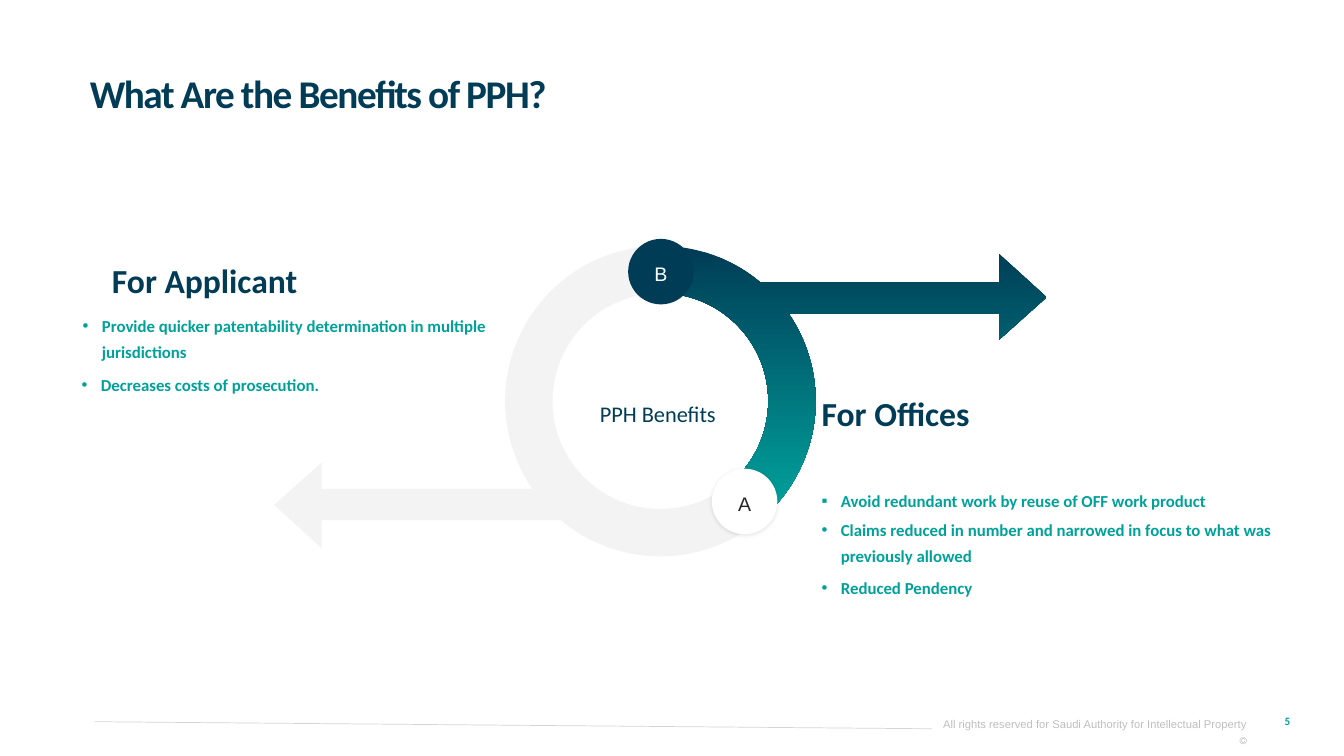
from dataclasses import dataclass
from math import asin, ceil, cos, degrees, floor, radians, sin, tan

from lxml import etree
from pptx import Presentation
from pptx.dml.color import RGBColor
from pptx.enum.shapes import MSO_CONNECTOR, MSO_SHAPE
from pptx.enum.text import MSO_ANCHOR, MSO_AUTO_SIZE, PP_ALIGN
from pptx.oxml.ns import qn
from pptx.util import Inches, Pt

LEFT, CENTER, RIGHT = PP_ALIGN.LEFT, PP_ALIGN.CENTER, PP_ALIGN.RIGHT
TOP, MIDDLE = MSO_ANCHOR.TOP, MSO_ANCHOR.MIDDLE
FIT_SHAPE, NO_FIT = MSO_AUTO_SIZE.SHAPE_TO_FIT_TEXT, MSO_AUTO_SIZE.NONE
OVAL, STRAIGHT = MSO_SHAPE.OVAL, MSO_CONNECTOR.STRAIGHT


@dataclass(frozen=True)
class Theme:
    navy: str = "003C56"
    teal: str = "00A19B"
    pale: str = "F3F3F3"
    white: str = "FFFFFF"
    dark: str = "262626"
    rule: str = "A6A6A6"
    muted: str = "BFBFBF"
    heading_font: str = "Calibri"
    plain_font: str = "Arial"
    title: int = 28
    heading: int = 24
    center: int = 16
    badge: int = 14
    body: int = 12
    small: int = 8
    tiny: int = 7


THEME = Theme()
RING_CENTER = (6.55, 3.98)
OUTER_RADIUS, INNER_RADIUS = 1.54, 1.07
SHAFT_TOP, SHAFT_BOTTOM = -1.18, -0.87
# Arrowhead corners relative to the ring centre
ARROW = [(3.36, SHAFT_TOP), (3.36, -1.46), (3.83, -1.03),
         (3.36, -0.61), (3.36, SHAFT_BOTTOM)]
BADGE_SIZE = 0.65
BULLET_INDENT = 0.19
BULLETS = [
    (0.82, 3.02, 4.18, 0.6, "•",
     "Provide quicker patentability determination in multiple jurisdictions"),
    (0.81, 3.61, 4.18, 0.33, "•", "Decreases costs of prosecution."),
    (8.15, 4.76, 4.97, 0.33, "▪",
     "Avoid redundant work by reuse of OFF work product"),
    (8.15, 5.05, 4.97, 0.6, "•",
     "Claims reduced in number and narrowed in focus to what was previously allowed"),
    (8.15, 5.62, 4.97, 0.33, "•", "Reduced Pendency"),
]


def rgb(color):
    return RGBColor.from_string(color)


def add_run(paragraph, text, size, color, font=THEME.heading_font, bold=False):
    run = paragraph.add_run()
    run.text = text
    run.font.name = font
    run.font.size = Pt(size)
    run.font.bold = bold
    run.font.color.rgb = rgb(color)
    return run


def write_text(shape, text, *, size, color, font=THEME.heading_font, bold=False,
               align=LEFT, anchor=TOP, margins=(0, 0.05, 0, 0.05), spacing=1.3,
               wrap=True, fit=FIT_SHAPE, bullet=None):
    """Format the shape's text and return its paragraph and run."""
    frame = shape.text_frame
    frame.word_wrap = wrap
    frame.auto_size = fit
    frame.vertical_anchor = anchor
    (frame.margin_left, frame.margin_top,
     frame.margin_right, frame.margin_bottom) = map(Inches, margins)
    paragraph = frame.paragraphs[0]
    paragraph.alignment = align
    paragraph.line_spacing = spacing
    if bullet:
        properties = paragraph._p.get_or_add_pPr()
        properties.set("marL", str(Inches(BULLET_INDENT)))
        properties.set("indent", str(-Inches(BULLET_INDENT)))
        bullet_font = etree.SubElement(properties, qn("a:buFont"))
        bullet_font.set("typeface", THEME.plain_font)
        etree.SubElement(properties, qn("a:buChar")).set("char", bullet)
    return paragraph, add_run(paragraph, text, size, color, font, bold)


def add_text(slide, left, top, width, height, text, **text_format):
    box = slide.shapes.add_textbox(*map(Inches, (left, top, width, height)))
    return write_text(box, text, **text_format)


def arc_curves(radius, start, end):
    """Return Bezier triples along an arc, split where it crosses an axis."""
    low, high = sorted((start, end))
    crossings = [90 * turn for turn in range(ceil(low / 90), floor(high / 90) + 1)]
    angles = [radians(angle) for angle in sorted({low, high, *crossings})]
    if start > end:
        angles.reverse()
    curves = []
    for first, last in zip(angles, angles[1:]):
        pull = 4 / 3 * tan((last - first) / 4)
        curves.append([
            (radius * (cos(first) - pull * sin(first)), radius * (sin(first) + pull * cos(first))),
            (radius * (cos(last) + pull * sin(last)), radius * (sin(last) - pull * cos(last))),
            (radius * cos(last), radius * sin(last))])
    return curves


def add_ring_arrow(slide, direction, outer_start, outer_end, inner_start, inner_end):
    """Draw a ring segment with an arrow; direction -1 turns it half round."""
    def polar(radius, angle):
        return radius * cos(radians(angle)), radius * sin(radians(angle))

    def place(point):
        return tuple(Inches(center + direction * offset)
                     for center, offset in zip(RING_CENTER, point))

    leave = degrees(asin(SHAFT_TOP / OUTER_RADIUS))
    rejoin = degrees(asin(SHAFT_BOTTOM / OUTER_RADIUS))
    segments = (arc_curves(OUTER_RADIUS, outer_start, leave)
                + [[corner] for corner in ARROW + [polar(OUTER_RADIUS, rejoin)]]
                + arc_curves(OUTER_RADIUS, rejoin, outer_end)
                + [[polar(INNER_RADIUS, inner_end)]]
                + arc_curves(INNER_RADIUS, inner_end, inner_start))
    builder = slide.shapes.build_freeform(*place(polar(OUTER_RADIUS, outer_start)))
    builder.add_line_segments([place(point) for segment in segments for point in segment])
    shape = builder.convert_to_shape()
    lines = iter(list(shape._element.spPr.iter(qn("a:lnTo"))))
    for segment in segments:
        group = [next(lines) for _ in segment]
        if len(group) == 3:
            curve = etree.Element(qn("a:cubicBezTo"))
            group[0].addprevious(curve)
            for line in group:
                curve.append(line[0])
                line.getparent().remove(line)
    shape.shadow.inherit = False
    shape.line.fill.background()
    return shape


def fill_gradient(shape, *colors):
    shape.fill.gradient()
    shape.fill.gradient_angle = 270
    for stop, color in zip(shape.fill.gradient_stops, colors):
        stop.color.rgb = rgb(color)


def fill_solid(shape, color):
    shape.fill.solid()
    shape.fill.fore_color.rgb = rgb(color)


def add_badge(slide, left, top, letter, fill, color):
    badge = slide.shapes.add_shape(OVAL, *map(Inches, (left, top, BADGE_SIZE, BADGE_SIZE)))
    badge.shadow.inherit = False
    fill_solid(badge, fill)
    badge.line.fill.background()
    write_text(badge, letter, size=THEME.badge, color=color, font=THEME.plain_font,
               align=CENTER, anchor=MIDDLE, margins=(0, 0, 0, 0), spacing=1.2, fit=NO_FIT)
    return badge


def add_soft_shadow(shape):
    effects = shape._element.spPr.find(qn("a:effectLst"))
    shadow = etree.SubElement(effects, qn("a:outerShdw"), blurRad=str(Pt(3)),
                              dist=str(Pt(1)), dir="5400000", algn="t", rotWithShape="0")
    color = etree.SubElement(shadow, qn("a:srgbClr"), val="000000")
    etree.SubElement(color, qn("a:alpha"), val="10000")


def add_footer(slide):
    add_text(slide, 12.22, 6.95, 1.1, 0.4, "5", size=THEME.small, color=THEME.teal,
             bold=True, align=CENTER, anchor=MIDDLE, spacing=1, fit=NO_FIT)
    paragraph, _ = add_text(
        slide, 9.24, 7.04, 3.37, 0.39,
        "All rights reserved for Saudi Authority for Intellectual Property ",
        size=THEME.small, color=THEME.muted, font=THEME.plain_font, align=RIGHT,
        margins=(0, 0.04, 0.24, 0.04))
    paragraph._p.get_or_add_pPr().set("rtl", "1")
    add_run(paragraph, " ©", THEME.tiny, THEME.muted)
    rule = slide.shapes.add_connector(STRAIGHT, *map(Inches, (0.94, 7.16, 9.24, 7.23)))
    rule.line.width = Pt(0.5)
    rule.line.color.rgb = rgb(THEME.rule)
    color = rule._element.spPr.find(".//" + qn("a:srgbClr"))
    etree.SubElement(color, qn("a:alpha"), val="48000")
    etree.SubElement(rule._element.spPr, qn("a:effectLst"))


def main():
    presentation = Presentation()
    presentation.slide_width, presentation.slide_height = Inches(13.33), Inches(7.5)
    slide = presentation.slides.add_slide(presentation.slide_layouts[6])
    add_footer(slide)
    fill_solid(add_ring_arrow(slide, -1, -123, 85, -122, 82), THEME.pale)
    fill_gradient(add_ring_arrow(slide, 1, -85, 44, -82, 44), THEME.navy, THEME.teal)
    add_badge(slide, 6.23, 2.37, "B", THEME.navy, THEME.white)
    add_soft_shadow(add_badge(slide, 7.06, 4.65, "A", THEME.white, THEME.dark))
    _, title = add_text(slide, 0.89, 0.57, 6.59, 1.17, "What Are the Benefits of PPH?",
                        size=THEME.title, color=THEME.navy, bold=True,
                        margins=(0, 0.21, 0, 0), spacing=0.8, fit=NO_FIT)
    title.font._element.set("spc", "-100")
    for left, top, width, height, text, size, bold, align in [
            (5.71, 3.84, 1.63, 0.41, "PPH Benefits", THEME.center, False, CENTER),
            (0.82, 2.41, 2.42, 0.57, "For Applicant", THEME.heading, True, CENTER),
            (8.15, 3.73, 2.06, 0.57, "For Offices", THEME.heading, True, LEFT)]:
        add_text(slide, left, top, width, height, text, size=size, color=THEME.navy,
                 bold=bold, align=align, wrap=align == LEFT)
    for left, top, width, height, bullet, text in BULLETS:
        add_text(slide, left, top, width, height, text, size=THEME.body,
                 color=THEME.teal, bold=True, bullet=bullet)
    presentation.save("out.pptx")


if __name__ == "__main__":
    main()
